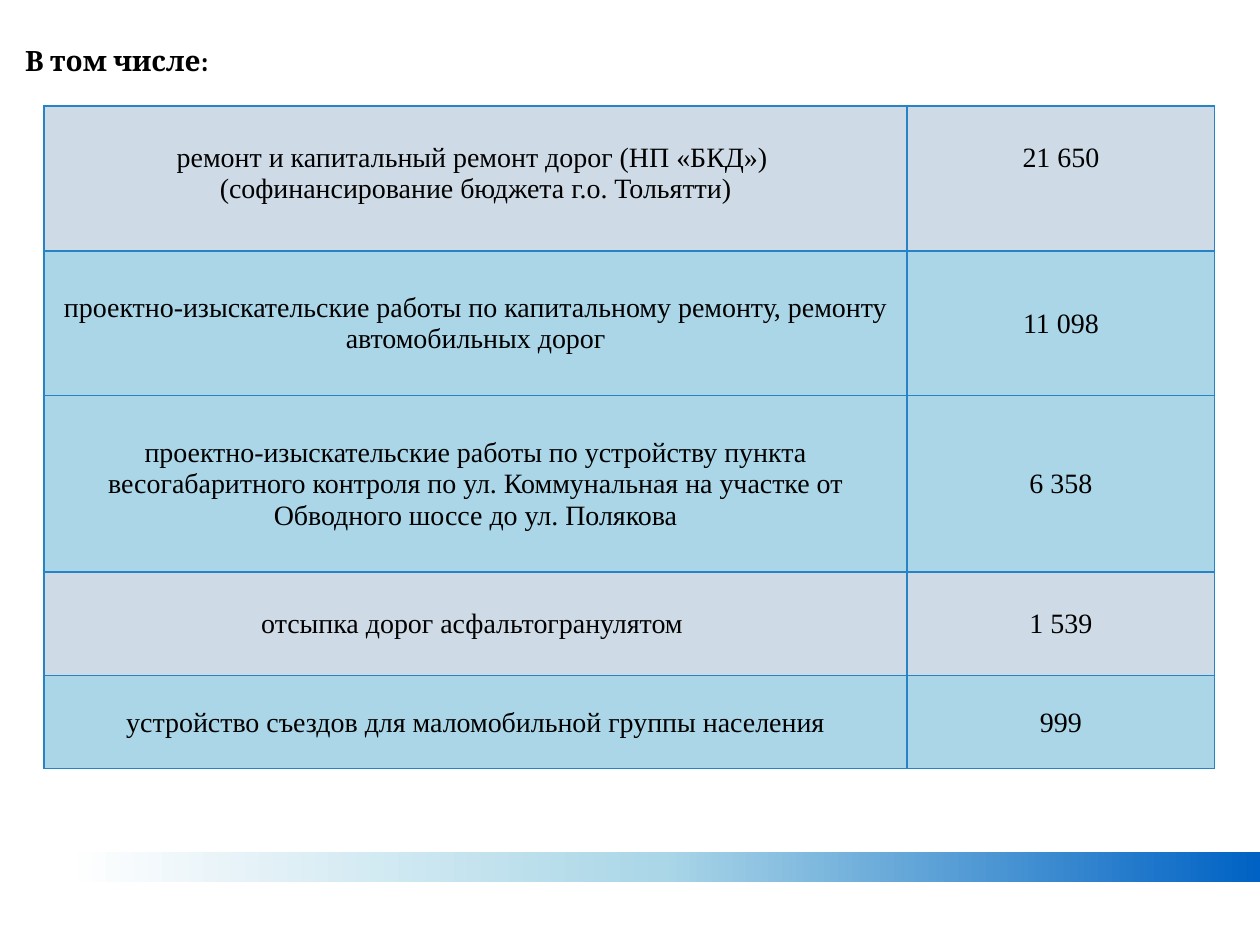
import pptx
import pptx.util
import pptx.dml.color
import pptx.enum.shapes
import pptx.enum.text
import pptx.oxml
import pptx.oxml.ns
from lxml import etree

WIDTH, HEIGHT = 10, 7.5
COLORS = {
    "text": "000000",
    "border": "2683C6",
    "pale": "CEDBE6",
    "aqua": "AAD6E7",
    "deep": "0062C4",
    "white": "FFFFFF",
}
A = pptx.oxml.ns.nsdecls("a")
MIDDLE = pptx.enum.text.MSO_ANCHOR.MIDDLE
TOP = pptx.enum.text.MSO_ANCHOR.TOP
CENTER = pptx.enum.text.PP_ALIGN.CENTER
inch = pptx.util.Inches

TITLE_FONT = {"name": "Cambria", "size": pptx.util.Pt(16), "bold": True}
CELL_FONT = {"name": "Times New Roman", "size": pptx.util.Pt(16), "bold": False}
TITLE_FRAME = {"word_wrap": True, "vertical_anchor": MIDDLE, "margin_left": inch(0.2)}
# The first row hangs one text line below its top edge
FIRST_CELL = {"vertical_anchor": TOP, "margin_top": inch(0.29)}
CELL = {
    "vertical_anchor": MIDDLE,
    "margin_left": inch(0.01),
    "margin_right": inch(0.01),
    "margin_top": inch(0.01),
    "margin_bottom": inch(0),
}

COLUMNS = [6.85, 2.44]
# Row height, fill, work description, amount
WORKS = [
    (1.15, "pale", "ремонт и капитальный ремонт дорог (НП «БКД») \n"
                   "(софинансирование бюджета г.о. Тольятти)", "21 650"),
    (1.15, "aqua", "проектно-изыскательские работы по капитальному ремонту, "
                   "ремонту автомобильных дорог", "11 098"),
    (1.4, "aqua", "проектно-изыскательские работы по устройству пункта "
                  "весогабаритного контроля по ул. Коммунальная на участке от "
                  "Обводного шоссе до ул. Полякова", "6 358"),
    (0.82, "pale", "отсыпка дорог асфальтогранулятом ", "1 539"),
    (0.74, "aqua", "устройство съездов для маломобильной группы населения", "999"),
]


def rgb(name):
    return pptx.dml.color.RGBColor.from_string(COLORS[name])


def apply(target, values):
    for name, value in values.items():
        setattr(target, name, value)


def write(frame, text, font, **paragraph_format):
    frame.text = text
    for paragraph in frame.paragraphs:
        apply(paragraph, paragraph_format)
        for run in paragraph.runs:
            apply(run.font, font)
            run.font.color.rgb = rgb("text")


def add_title(slide, text):
    title = slide.shapes.add_textbox(0, 0, inch(WIDTH), inch(0.99))
    apply(title.text_frame, TITLE_FRAME)
    write(title.text_frame, text, TITLE_FONT, line_spacing=0.9)


def add_borders(cell):
    properties = cell._tc.get_or_add_tcPr()
    for position, side in enumerate("LRTB"):
        properties.insert(position, pptx.oxml.parse_xml(
            f'<a:ln{side} {A} w="12700"><a:solidFill>'
            f'<a:srgbClr val="{COLORS["border"]}"/></a:solidFill></a:ln{side}>'))


def add_works_table(slide):
    heights = [work[0] for work in WORKS]
    table = slide.shapes.add_table(
        len(WORKS), len(COLUMNS), inch(0.35), inch(0.84),
        inch(sum(COLUMNS)), inch(sum(heights))).table
    for column, width in zip(table.columns, COLUMNS):
        column.width = inch(width)
    for index, (height, fill, *texts) in enumerate(WORKS):
        table.rows[index].height = inch(height)
        for cell, text in zip(table.rows[index].cells, texts):
            apply(cell, CELL if index else FIRST_CELL)
            write(cell.text_frame, text, CELL_FONT, alignment=CENTER)
            cell.fill.solid()
            cell.fill.fore_color.rgb = rgb(fill)
            add_borders(cell)


def add_gradient_band(slide, stops):
    left = 0.051 * WIDTH
    band = slide.shapes.add_shape(
        pptx.enum.shapes.MSO_SHAPE.RECTANGLE,
        inch(left), inch(6.76), inch(WIDTH - left), inch(0.24))
    band.shadow.inherit = False
    band.line.fill.background()
    band.fill.gradient()
    band.fill.gradient_angle = 180
    # Replace the default stops with evenly spaced ones
    stop_list = band._element.spPr.find(".//" + pptx.oxml.ns.qn("a:gsLst"))
    for stop in list(stop_list):
        stop_list.remove(stop)
    for index, name in enumerate(stops):
        position = 100000 * index // (len(stops) - 1)
        stop = etree.SubElement(stop_list, pptx.oxml.ns.qn("a:gs"), pos=str(position))
        etree.SubElement(stop, pptx.oxml.ns.qn("a:srgbClr"), val=COLORS[name])


def main():
    deck = pptx.Presentation()
    deck.slide_width, deck.slide_height = inch(WIDTH), inch(HEIGHT)
    slide = deck.slides.add_slide(deck.slide_layouts[6])
    add_title(slide, "В том числе:")
    add_works_table(slide)
    add_gradient_band(slide, ["deep", "aqua", "white"])
    deck.save("out.pptx")


if __name__ == "__main__":
    main()
